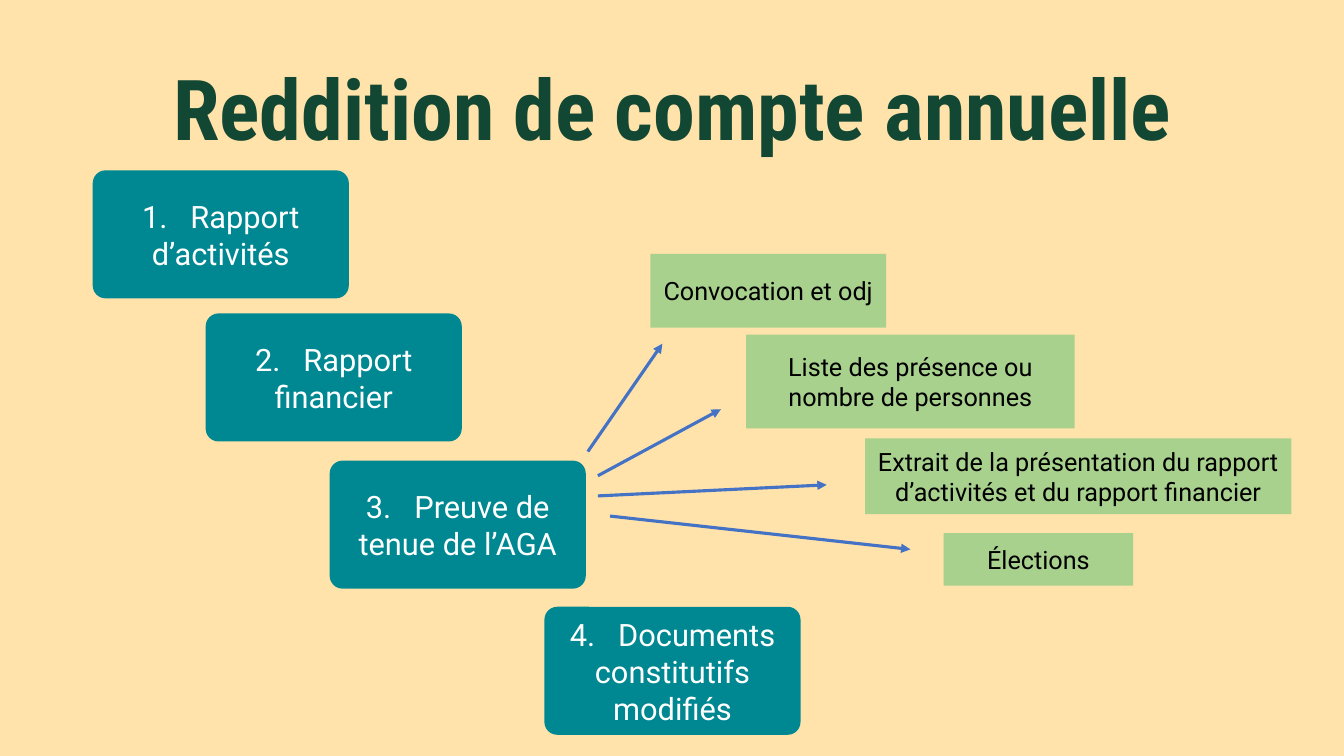
import pptx
import pptx.dml.color
import pptx.enum.shapes
import pptx.enum.text
import pptx.oxml
import pptx.oxml.ns
import pptx.util
from pptx.util import Inches

CREAM = "FFE3AB"
DARK_GREEN = "124733"
TEAL = "008892"
LIGHT_GREEN = "A9D18E"
BLUE = "4472C4"
WHITE = "FFFFFF"
BLACK = "000000"

STEP_SIZE = (2.54, 1.27)
STEPS = [
    (0.92, 1.69, "Rapport d’activités"),
    (2.04, 3.11, "Rapport financier"),
    (3.27, 4.57, "Preuve de tenue de l’AGA"),
    (5.4, 6.02, "Documents constitutifs modifiés"),
]
PROOFS = [
    ((6.45, 2.52, 2.34, 0.73), "Convocation et odj"),
    ((7.4, 3.32, 3.26, 0.93), "Liste des présence ou nombre de personnes"),
    ((8.58, 4.35, 4.23, 0.75),
     "Extrait de la présentation du rapport d’activités et du rapport financier"),
    ((9.36, 5.29, 1.88, 0.52), "Élections"),
]
ARROWS = [
    (5.83, 4.48, 6.57, 3.41),
    (5.93, 4.72, 7.15, 4.06),
    (5.93, 4.92, 8.2, 4.81),
    (6.05, 5.12, 9.03, 5.45),
]


def color(value):
    return pptx.dml.color.RGBColor.from_string(value)


def fill_background(slide):
    fill = slide.background.fill
    fill.solid()
    fill.fore_color.rgb = color(CREAM)


def format_text(shape, size, font_name, font_color, bold=False):
    frame = shape.text_frame
    frame.word_wrap = True
    frame.vertical_anchor = pptx.enum.text.MSO_ANCHOR.MIDDLE
    for paragraph in frame.paragraphs:
        paragraph.alignment = pptx.enum.text.PP_ALIGN.CENTER
        for run in paragraph.runs:
            run.font.size = pptx.util.Pt(size)
            run.font.name = font_name
            run.font.bold = bold
            run.font.color.rgb = color(font_color)


def add_block(slide, kind, box, fill_color):
    shape = slide.shapes.add_shape(kind, *map(Inches, box))
    shape.shadow.inherit = False
    shape.fill.solid()
    shape.fill.fore_color.rgb = color(fill_color)
    shape.line.fill.background()
    return shape


def add_title(slide, box):
    title = slide.shapes.add_textbox(*map(Inches, box))
    title.text_frame.text = "Reddition de compte annuelle"
    title.text_frame.paragraphs[0].line_spacing = 0.9
    format_text(title, 60, "Roboto Condensed", DARK_GREEN, bold=True)


def add_step(slide, box, number, label):
    kind = pptx.enum.shapes.MSO_SHAPE.ROUNDED_RECTANGLE
    step = add_block(slide, kind, box, TEAL)
    step.adjustments[0] = 0.1
    frame = step.text_frame
    frame.margin_left = frame.margin_right = Inches(0.05)
    frame.margin_top = frame.margin_bottom = Inches(0.03)
    paragraph = frame.paragraphs[0]
    for part in (f"{number}.", " ", label):
        paragraph.add_run().text = part
    format_text(step, 22, "Roboto", WHITE)
    gap = paragraph.runs[1]
    gap.font._element.set("spc", "1100")


def add_proof(slide, box, label):
    kind = pptx.enum.shapes.MSO_SHAPE.RECTANGLE
    proof = add_block(slide, kind, box, LIGHT_GREEN)
    proof.text_frame.text = label
    format_text(proof, 18, "Roboto", BLACK)


def add_arrow(slide, ends):
    straight = pptx.enum.shapes.MSO_CONNECTOR.STRAIGHT
    arrow = slide.shapes.add_connector(straight, *map(Inches, ends))
    arrow.line.color.rgb = color(BLUE)
    arrow.line.width = pptx.util.Pt(2.25)
    namespace = pptx.oxml.ns.nsdecls("a")
    head = pptx.oxml.parse_xml(f'<a:tailEnd {namespace} type="triangle"/>')
    arrow.line._get_or_add_ln().append(head)
    no_effect = pptx.oxml.parse_xml(f"<a:effectLst {namespace}/>")
    arrow._element.spPr.append(no_effect)


def build_slide(presentation):
    slide = presentation.slides.add_slide(presentation.slide_layouts[6])
    fill_background(slide)
    add_title(slide, (0.92, 0.4, 11.5, 1.45))
    for number, (left, top, label) in enumerate(STEPS, start=1):
        add_step(slide, (left, top, *STEP_SIZE), number, label)
    for box, label in PROOFS:
        add_proof(slide, box, label)
    for ends in ARROWS:
        add_arrow(slide, ends)


def main():
    presentation = pptx.Presentation()
    presentation.slide_width = Inches(13.33)
    presentation.slide_height = Inches(7.5)
    build_slide(presentation)
    presentation.save("out.pptx")


if __name__ == "__main__":
    main()
